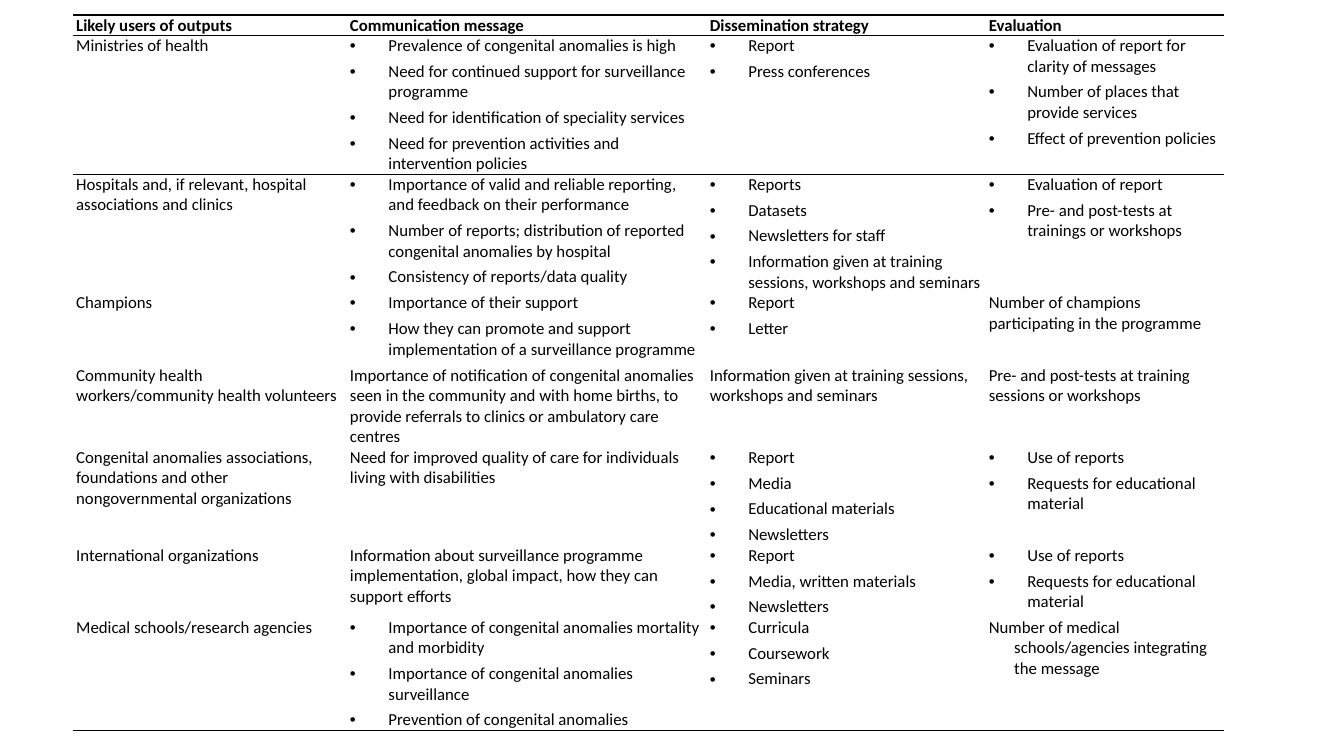
from dataclasses import dataclass

from lxml import etree
from pptx import Presentation
from pptx import util as u
from pptx.dml.color import RGBColor
from pptx.enum import text
from pptx.oxml import ns


@dataclass
class Theme:
    font: str = "Calibri"
    size: float = 12
    ink: str = "000000"
    rule: float = 1
    gap: float = 3.8
    indent: float = 0.97
    hanging: float = 0.64
    tab: float = 0.53
    inset: float = 0.08
    plain_table: str = "{2D5ABB26-0587-4C30-8999-92F81FD0307C}"


def add_element(parent, tag, **attributes):
    return etree.SubElement(parent, ns.qn(tag), {k: str(v) for k, v in attributes.items()})


class SlideBuilder:
    def __init__(self, slide, theme):
        self.slide = slide
        self.theme = theme

    def table(self, left, top, height, column_widths, row_heights, rows):
        frame = self.slide.shapes.add_table(
            len(rows), len(column_widths), u.Cm(left), u.Cm(top),
            u.Cm(sum(column_widths)), u.Cm(height))
        table = frame.table
        table.first_row = table.horz_banding = False
        table._tbl.tblPr.find(ns.qn("a:tableStyleId")).text = self.theme.plain_table
        for column, width in zip(table.columns, column_widths):
            column.width = u.Cm(width)
        for row, row_height in zip(table.rows, row_heights):
            row.height = u.Cm(row_height)
        frame.height = u.Cm(height)
        last = len(rows) - 1
        for i, contents in enumerate(rows):
            edges = {0: ("a:lnT", "a:lnB"), 1: ("a:lnT",), last: ("a:lnB",)}.get(i, ())
            for j, content in enumerate(contents):
                self.cell(table.cell(i, j), content, edges, heading=i == 0)
        return table

    def cell(self, cell, content, edges, heading):
        cell.margin_left = cell.margin_right = u.Cm(self.theme.inset)
        cell.margin_top = cell.margin_bottom = 0
        anchors = text.MSO_ANCHOR
        cell.vertical_anchor = anchors.BOTTOM if heading else anchors.TOP
        for edge in edges:
            self.border(cell, edge)
        cell.fill.background()
        bulleted = isinstance(content, list)
        lines = content if bulleted else [content]
        for number, line in enumerate(lines):
            frame = cell.text_frame
            paragraph = frame.add_paragraph() if number else frame.paragraphs[0]
            paragraph.text = line
            if bulleted:
                self.indent(paragraph, self.theme.indent, bullet="•")
            if number:
                paragraph.space_before = u.Pt(self.theme.gap)
            self.font(paragraph, heading)

    def border(self, cell, edge):
        line = add_element(cell._tc.get_or_add_tcPr(), edge, w=u.Pt(self.theme.rule))
        add_element(add_element(line, "a:solidFill"), "a:srgbClr", val=self.theme.ink)

    def indent(self, paragraph, depth, bullet=None):
        properties = paragraph._p.get_or_add_pPr()
        for child in list(properties):
            properties.remove(child)
        properties.set("marL", str(u.Cm(depth)))
        properties.set("indent", str(-u.Cm(depth)))
        if bullet:
            add_element(properties, "a:buFont", typeface="Arial")
            add_element(properties, "a:buChar", char=bullet)
        tabs = add_element(properties, "a:tabLst")
        add_element(tabs, "a:tab", pos=u.Cm(self.theme.tab), algn="l")

    def font(self, paragraph, bold=False):
        font = paragraph.font
        font.name = self.theme.font
        font.size = u.Pt(self.theme.size)
        font.bold = bold
        font.color.rgb = RGBColor.from_string(self.theme.ink)


ROWS = [
    ["Likely users of outputs", "Communication message", "Dissemination strategy", "Evaluation"],
    ["Ministries of health",
     ["Prevalence of congenital anomalies is high",
      "Need for continued support for surveillance programme",
      "Need for identification of speciality services",
      "Need for prevention activities and intervention policies"],
     ["Report", "Press conferences"],
     ["Evaluation of report for clarity of messages",
      "Number of places that provide services",
      "Effect of prevention policies"]],
    ["Hospitals and, if relevant, hospital associations and clinics",
     ["Importance of valid and reliable reporting, and feedback on their performance",
      "Number of reports; distribution of reported congenital anomalies by hospital",
      "Consistency of reports/data quality"],
     ["Reports", "Datasets", "Newsletters for staff",
      "Information given at training sessions, workshops and seminars"],
     ["Evaluation of report", "Pre- and post-tests at trainings or workshops"]],
    ["Champions",
     ["Importance of their support",
      "How they can promote and support implementation of a surveillance programme"],
     ["Report", "Letter"],
     "Number of champions participating in the programme"],
    ["Community health workers/community health volunteers",
     "Importance of notification of congenital anomalies seen in the community and with "
     "home births, to provide referrals to clinics or ambulatory care centres",
     "Information given at training sessions, workshops and seminars",
     "Pre- and post-tests at training sessions or workshops"],
    ["Congenital anomalies associations, foundations and other nongovernmental organizations",
     "Need for improved quality of care for individuals living with disabilities",
     ["Report", "Media", "Educational materials", "Newsletters"],
     ["Use of reports", "Requests for educational material"]],
    ["International organizations",
     "Information about surveillance programme implementation, global impact, "
     "how they can support efforts",
     ["Report", "Media, written materials", "Newsletters"],
     ["Use of reports", "Requests for educational material"]],
    ["Medical schools/research agencies",
     ["Importance of congenital anomalies mortality and morbidity",
      "Importance of congenital anomalies surveillance",
      "Prevention of congenital anomalies"],
     ["Curricula", "Coursework", "Seminars"],
     "Number of medical schools/agencies integrating the message"],
]
COLUMN_WIDTHS = [6.9, 9.07, 7.03, 6]
ROW_HEIGHTS = [0.51, 3.25, 2.74, 1.83, 1.5, 1.78, 1.32, 2.41]


def main():
    presentation = Presentation()
    presentation.slide_width = u.Cm(33.87)
    presentation.slide_height = u.Cm(19.05)
    slide = presentation.slides.add_slide(presentation.slide_layouts[6])
    theme = Theme()
    builder = SlideBuilder(slide, theme)
    table = builder.table(1.84, 0.38, 17.88, COLUMN_WIDTHS, ROW_HEIGHTS, ROWS)
    closing = table.cell(len(ROWS) - 1, 3).text_frame.paragraphs[0]
    builder.indent(closing, theme.hanging)
    builder.font(closing)
    presentation.save("out.pptx")


if __name__ == "__main__":
    main()
